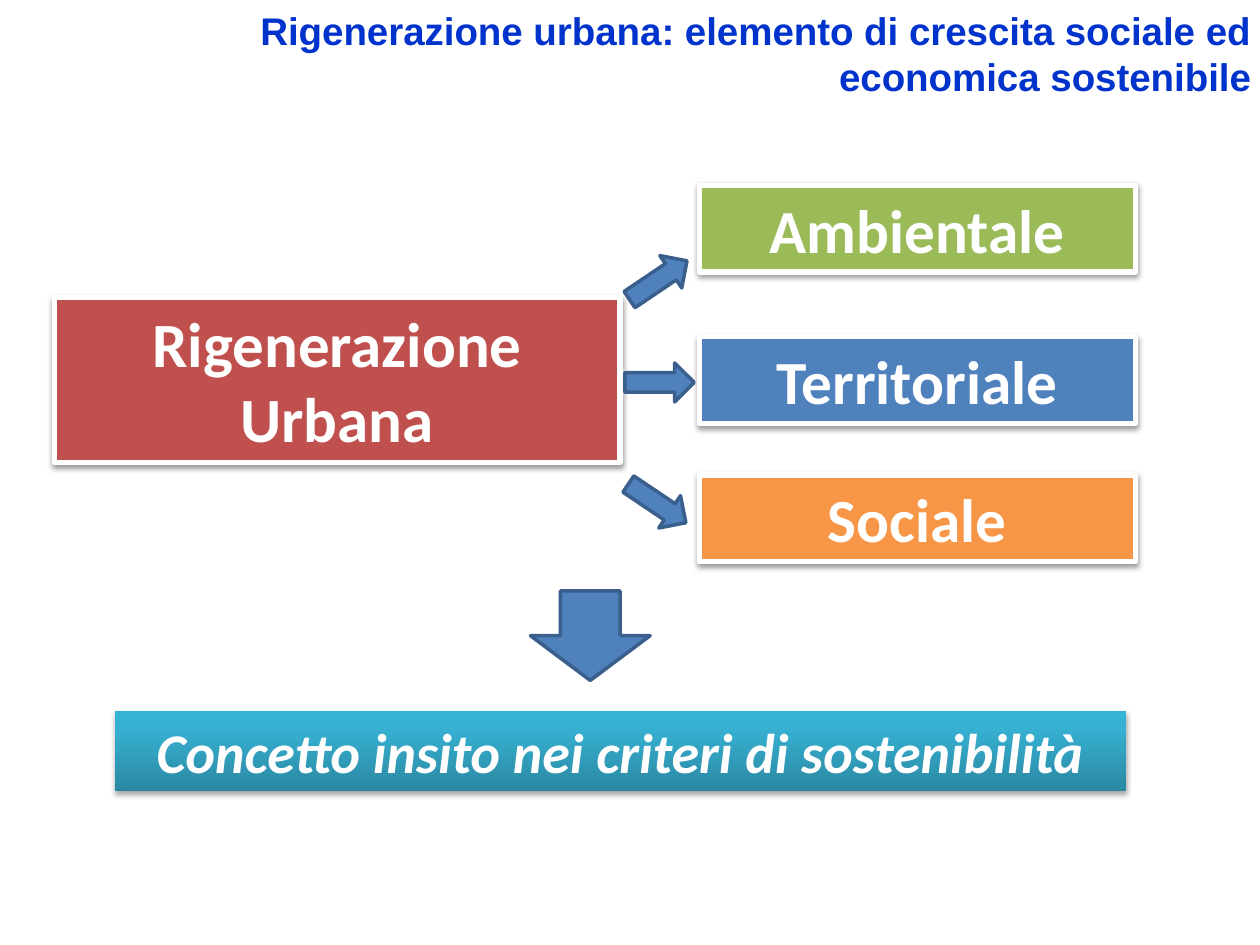
import pptx
import copy
import pptx.util
import pptx.dml.color
import pptx.enum.shapes
import pptx.enum.text
import pptx.oxml
import pptx.oxml.ns

Pt = pptx.util.Pt
RGB = pptx.dml.color.RGBColor
SHAPE = pptx.enum.shapes.MSO_SHAPE
ALIGN = pptx.enum.text.PP_ALIGN
MIDDLE = pptx.enum.text.MSO_ANCHOR.MIDDLE

WHITE = RGB(0xFF, 0xFF, 0xFF)
NAVY = RGB(0x00, 0x33, 0xCC)
RED = RGB(0xC0, 0x50, 0x4D)
GREEN = RGB(0x9B, 0xBB, 0x59)
BLUE = RGB(0x4F, 0x81, 0xBD)
ORANGE = RGB(0xF7, 0x96, 0x46)
EDGE = RGB(0x3A, 0x5F, 0x8C)
TEAL = [(0, RGB(0x2A, 0x88, 0xA2)), (0.8, RGB(0x37, 0xB1, 0xD2)),
        (1, RGB(0x34, 0xB4, 0xD6))]

# Content
TITLE = "Rigenerazione urbana: elemento di crescita sociale ed economica sostenibile"
CORE = "Rigenerazione Urbana"
FIELDS = [("Ambientale", GREEN, 105.8), ("Territoriale", BLUE, 192.2),
          ("Sociale", ORANGE, 271.4)]
CLAIM = "Concetto insito nei criteri di sostenibilità"
SMALL = (39.6, 22.3)
ARROWS = [  # kind, left, top, size, turn
    (SHAPE.RIGHT_ARROW, 357.1, 207.4, SMALL, 0),
    (SHAPE.RIGHT_ARROW, 356.4, 149, SMALL, 326),
    (SHAPE.RIGHT_ARROW, 355.7, 276.5, SMALL, 33.9),
    (SHAPE.DOWN_ARROW, 303.1, 337.7, (68.4, 51.1), 0),
]


def style(para, name, size, color, align):
    para.alignment = align
    for run in para.runs:
        font = run.font
        font.name, font.size, font.bold = name, Pt(size), True
        font.color.rgb = color


def add_shape(slide, kind, area):
    shape = slide.shapes.add_shape(kind, *map(Pt, area))
    shape.shadow.inherit = False
    return shape


def paint(shape, fill, edge, width):
    shape.fill.solid()
    shape.fill.fore_color.rgb = fill
    shape.line.color.rgb = edge
    shape.line.width = Pt(width)


def cast(shape, dist, alpha):
    effects = shape._element.spPr.find(pptx.oxml.ns.qn("a:effectLst"))
    effects.append(pptx.oxml.parse_xml(
        f'<a:outerShdw {pptx.oxml.ns.nsdecls("a")} blurRad="{Pt(3.1)}" '
        f'dist="{Pt(dist)}" dir="5400000" rotWithShape="0"><a:srgbClr val="000000">'
        f'<a:alpha val="{alpha * 1000}"/></a:srgbClr></a:outerShdw>'))


def blend(shape, stops):
    shape.fill.gradient()
    shape.fill.gradient_angle = 90
    grid = shape._element.spPr.find(".//" + pptx.oxml.ns.qn("a:gsLst"))
    while len(grid) < len(stops):
        grid.append(copy.deepcopy(grid[0]))
    for stop, (place, color) in zip(shape.fill.gradient_stops, stops):
        stop.position = place
        stop.color.rgb = color


def add_box(slide, text, area, size):
    box = add_shape(slide, SHAPE.RECTANGLE, area)
    frame = box.text_frame
    frame.word_wrap = True
    frame.vertical_anchor = MIDDLE
    frame.text = text
    style(frame.paragraphs[0], "Calibri", size, WHITE, ALIGN.CENTER)
    return box


def main():
    deck = pptx.Presentation()
    deck.slide_width, deck.slide_height = Pt(720), Pt(540)
    slide = deck.slides.add_slide(deck.slide_layouts[5])

    # Title
    title = slide.shapes.title
    title.left, title.top, title.width, title.height = map(Pt, (54, 0, 666, 60.5))
    frame = title.text_frame
    frame.text = TITLE
    frame.word_wrap = True
    frame.auto_size = pptx.enum.text.MSO_AUTO_SIZE.NONE
    frame.vertical_anchor = MIDDLE
    frame.margin_left = frame.margin_right = Pt(5)
    frame.margin_top = frame.margin_bottom = Pt(3)
    style(frame.paragraphs[0], "Arial", 22, NAVY, ALIGN.RIGHT)

    # Core idea and its fields
    boxes = [(CORE, RED, (31, 169.9, 323.3, 94.3), 36)]
    boxes += [(text, fill, (399.6, top, 249.1, 49.7), 35)
              for text, fill, top in FIELDS]
    for text, fill, area, size in boxes:
        box = add_box(slide, text, area, size)
        paint(box, fill, WHITE, 3)
        cast(box, 1.6, 38)

    # Closing claim
    claim = add_box(slide, CLAIM, (65.5, 406.1, 578.2, 46.1), 32)
    claim.text_frame.paragraphs[0].runs[0].font.italic = True
    blend(claim, TEAL)
    claim.line.fill.background()
    cast(claim, 1.8, 35)

    # Arrows
    for kind, left, top, size, turn in ARROWS:
        arrow = add_shape(slide, kind, (left, top, *size))
        arrow.rotation = turn
        paint(arrow, BLUE, EDGE, 2)

    deck.save("out.pptx")


if __name__ == "__main__":
    main()
